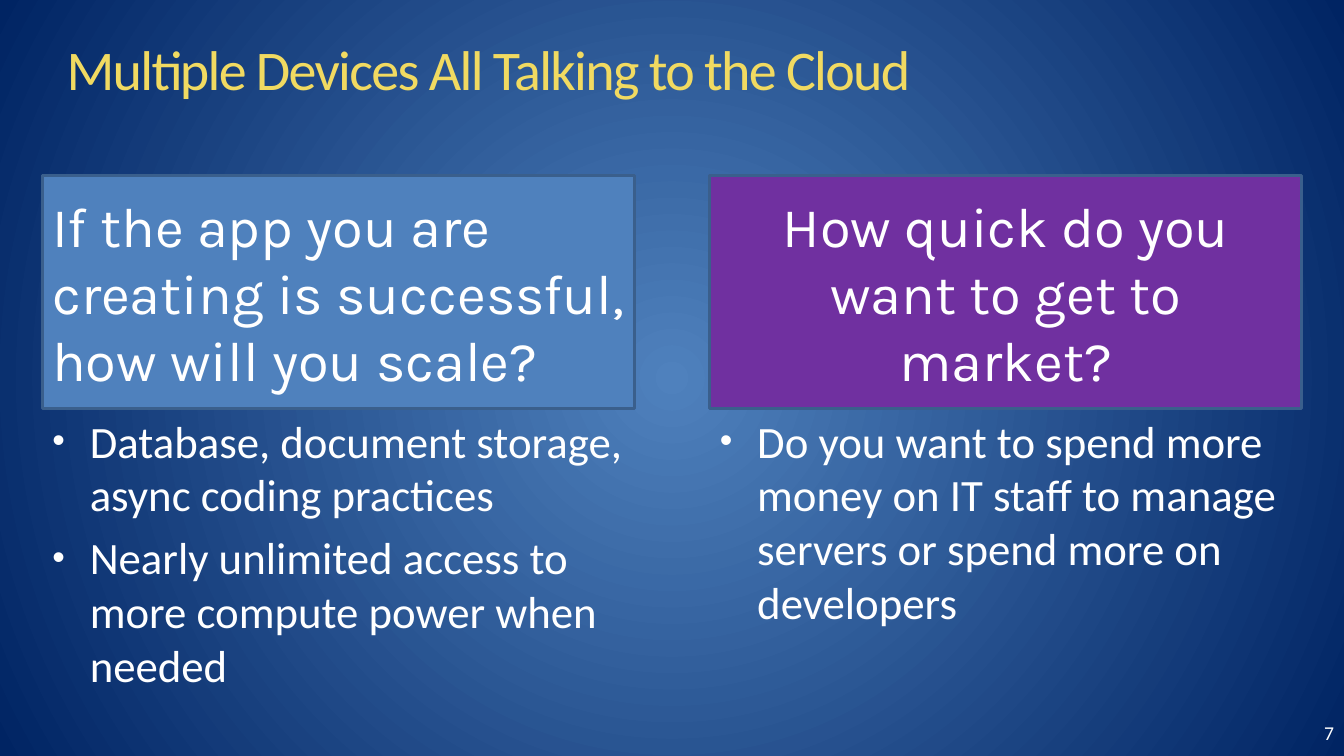
from lxml import etree
from pptx import Presentation
from pptx import util as u
from pptx.dml.color import RGBColor
from pptx.enum import shapes, text
from pptx.oxml import parse_xml
from pptx.oxml.ns import nsdecls, qn

COLORS = {
    "glow": "4F81BD", "navy": "002463", "title": "F1DA61", "text": "FFFFFF",
    "blue": "4F81BD", "purple": "7030A0", "border": "3A5F8C",
}
LEFT, CENTER, RIGHT = text.PP_ALIGN.LEFT, text.PP_ALIGN.CENTER, text.PP_ALIGN.RIGHT
TOP, MIDDLE = text.MSO_ANCHOR.TOP, text.MSO_ANCHOR.MIDDLE
COLUMN_TOP, COLUMN_W, HEADING_H, LIST_H = 1.74, 5.87, 2.31, 2.68
COLUMN_LEFT, COLUMN_STEP = 0.42, 6.62

COLUMNS = [
    ("If the app you are creating is successful, how will you scale?", "blue", LEFT,
     ["Database, document storage, async coding practices",
      "Nearly unlimited access to more compute power when needed"]),
    ("How quick do you want to get to market?", "purple", CENTER,
     ["Do you want to spend more money on IT staff to manage servers "
      "or spend more on developers"]),
]


def rgb(name):
    return RGBColor.from_string(COLORS[name])


def place(sp, x, y, w, h):
    sp.left, sp.top, sp.width, sp.height = (u.Inches(v) for v in (x, y, w, h))


def add_bullet(p):
    pPr = p._p.get_or_add_pPr()
    pPr.set("marL", str(u.Inches(0.37)))
    pPr.set("indent", str(-u.Inches(0.37)))
    for tag, key, value in (("a:buSzPct", "val", "80000"),
                            ("a:buFont", "typeface", "Arial"),
                            ("a:buChar", "char", "•")):
        etree.SubElement(pPr, qn(tag)).set(key, value)


def write(sp, lines, size, font="Calibri", color="text", align=LEFT,
          anchor=TOP, bullets=False, gap=0, spacing=None):
    tf = sp.text_frame
    tf.word_wrap = True
    tf.auto_size = text.MSO_AUTO_SIZE.NONE
    tf.vertical_anchor = anchor
    for i, line in enumerate(lines):
        p = tf.add_paragraph() if i else tf.paragraphs[0]
        p.alignment = align
        p.space_before = u.Pt(gap if i else 0)
        if bullets:
            add_bullet(p)
        r = p.add_run()
        r.text = line
        r.font.size, r.font.name = u.Pt(size), font
        r.font.color.rgb = rgb(color)
        if spacing is not None:
            r._r.get_or_add_rPr().set("spc", str(round(spacing * 100)))


def paint_background(s):
    fill = s.background.fill
    fill.gradient()
    for stop, name in zip(fill.gradient_stops, ("glow", "navy")):
        stop.color.rgb = rgb(name)
    # Radial gradient from the slide's centre
    grad = s.background._cSld.find(".//" + qn("a:gradFill"))
    radial = parse_xml(
        f'<a:path {nsdecls("a")} path="circle">'
        '<a:fillToRect l="50000" t="50000" r="50000" b="50000"/></a:path>')
    grad.replace(grad.find(qn("a:lin")), radial)


def add_title(s, x, y, w, h):
    place(s.shapes.title, x, y, w, h)
    write(s.shapes.title, ["Multiple Devices All Talking to the Cloud"], 40,
          color="title", anchor=MIDDLE, spacing=-1.2)


def add_column(s, body, x, y, w, heading, fill, align, points):
    # Question panel
    panel = s.shapes.add_shape(shapes.MSO_SHAPE.RECTANGLE, 0, 0, 0, 0)
    place(panel, x, y, w, HEADING_H)
    panel.shadow.inherit = False
    panel.fill.solid()
    panel.fill.fore_color.rgb = rgb(fill)
    panel.line.color.rgb = rgb("border")
    panel.line.width = u.Pt(2)
    write(panel, [heading], 40, font="Karla", align=align, anchor=MIDDLE)
    # Bulleted answers
    place(body, x, y + HEADING_H, w, LIST_H)
    write(body, points, 32, bullets=True, gap=6.4)


def add_page_number(s, x, y, w, h):
    box = s.shapes.add_textbox(0, 0, 0, 0)
    place(box, x, y, w, h)
    write(box, ["7"], 14, align=RIGHT)


def main():
    prs = Presentation()
    prs.slide_width, prs.slide_height = u.Inches(13.33), u.Inches(7.5)
    s = prs.slides.add_slide(prs.slide_layouts.get_by_name("Two Content"))
    paint_background(s)
    add_title(s, 0.56, 0.26, 12.32, 0.83)
    bodies = list(s.placeholders)[1:]
    for i, (body, column) in enumerate(zip(bodies, COLUMNS)):
        add_column(s, body, COLUMN_LEFT + i * COLUMN_STEP, COLUMN_TOP, COLUMN_W, *column)
    add_page_number(s, 12.79, 7.1, 0.54, 0.4)
    prs.save("out.pptx")


if __name__ == "__main__":
    main()
